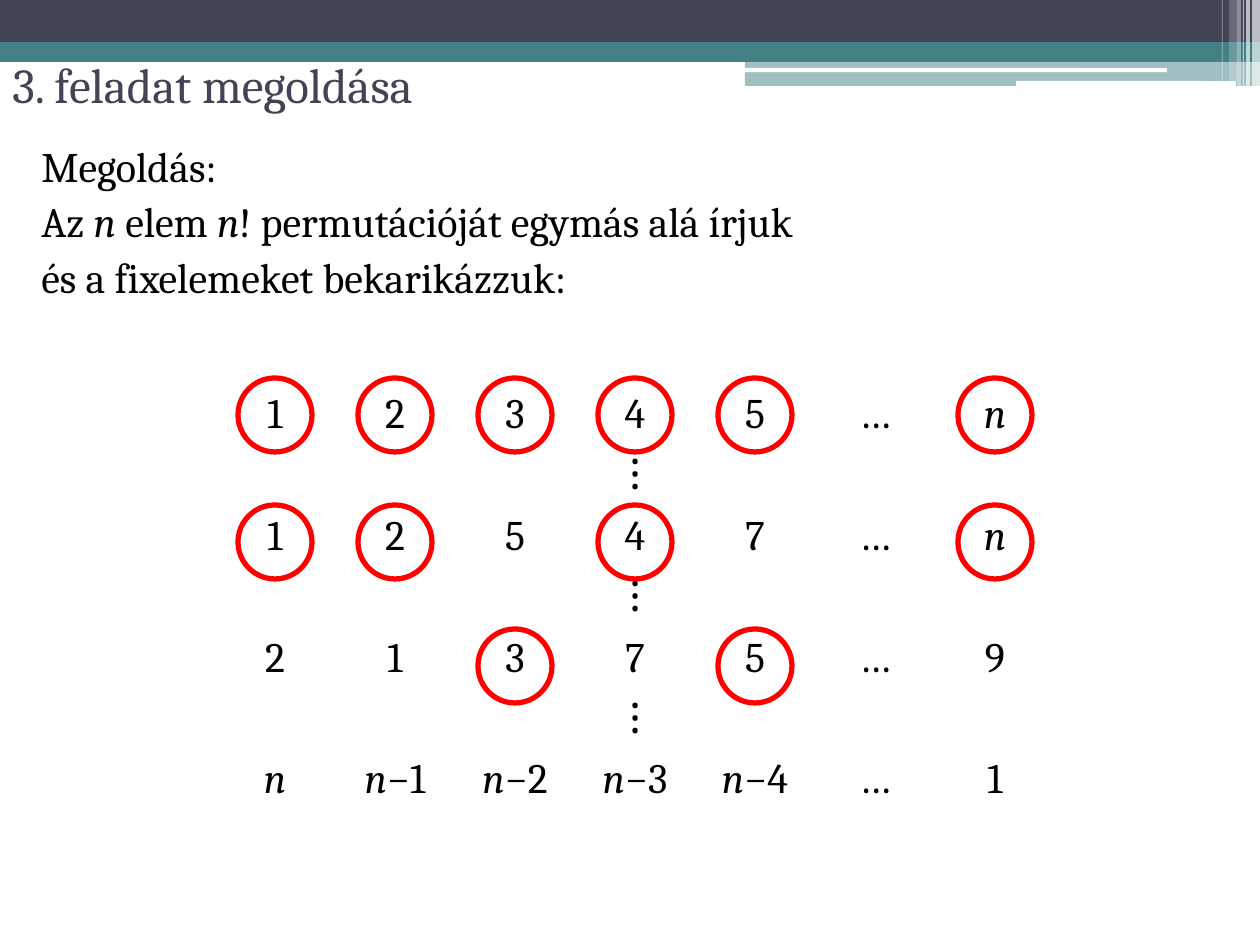
from lxml import etree
from pptx import Presentation
from pptx import util as u
from pptx.dml.color import RGBColor
from pptx.enum import shapes, text
from pptx.oxml.ns import qn

SCALE = 914400 / 126
COLORS = {"navy": "424456", "teal": "438086", "white": "FFFFFF",
          "black": "000000", "red": "FF0000"}
ROWS = [
    ["1", "2", "3", "4", "5", "…", "*n*"],
    ["", "", "", "⁝", "", "", ""],
    ["1", "2", "5", "4", "7", "…", "*n*"],
    ["", "", "", "⁝", "", "", ""],
    ["2", "1", "3", "7", "5", "…", "9"],
    ["", "", "", "⁝", "", "", ""],
    ["*n*", "*n*−1", "*n*−2", "*n*−3", "*n*−4", "…", "1"],
]
CIRCLE_TOPS = {0: 378, 2: 505, 4: 629}


def px(length):
    return u.Emu(round(length * SCALE))


def rgb(name):
    return RGBColor.from_string(COLORS[name])


def write(para, content, size=24, color="black", font="Cambria", align=None):
    """Fill a paragraph; parts between asterisks are italic."""
    para.alignment = align
    for index, part in enumerate(content.split("*")):
        if part:
            span = para.add_run()
            span.text = part
            span.font.size = u.Pt(size)
            span.font.name = font
            span.font.italic = index % 2 == 1
            span.font.color.rgb = rgb(color)


def add_bar(page, box, color, opacity=100, kind=shapes.MSO_SHAPE.RECTANGLE):
    bar = page.shapes.add_shape(kind, *map(px, box))
    bar.shadow.inherit = False
    bar.fill.solid()
    bar.fill.fore_color.rgb = rgb(color)
    bar.line.fill.background()
    if opacity < 100:
        tint = bar.fill._xPr.find(".//" + qn("a:srgbClr"))
        etree.SubElement(tint, qn("a:alpha"), val=str(opacity * 1000))


def add_banner(page, left, top, width):
    right = left + width
    for offset, y, height, color, opacity in [
            (0, 50, 12, "teal", 50), (0, 0, 42, "navy", 100), (0, 42, 20, "teal", 100),
            (745, 49, 13, "teal", 100), (745, 61, 25, "teal", 50)]:
        add_bar(page, (left + offset, top + y, width - offset, height), color, opacity)
    for x, y, length, height in [(745, 68, 422, 4), (1016, 81, 220, 5)]:
        add_bar(page, (left + x, top + y, length, height), "white",
                kind=shapes.MSO_SHAPE.ROUNDED_RECTANGLE)
    for inset, thickness, height, opacity in [
            (8, 8, 86, 65), (14, 4, 86, 65), (17, 1, 86, 60),
            (23, 4, 86, 40), (31, 8, 81, 20), (38, 1, 81, 30)]:
        add_bar(page, (right - inset, top, thickness, height), "white", opacity)


def add_text(page, box, lines, anchor, indent=0, before=0, **style):
    frame = page.shapes.add_textbox(*map(px, box)).text_frame
    frame.word_wrap = True
    frame.vertical_anchor = anchor
    for index, line in enumerate(lines):
        para = frame.paragraphs[0] if index == 0 else frame.add_paragraph()
        para.space_before = u.Pt(before)
        para._p.get_or_add_pPr().set("marL", str(px(indent)))
        write(para, line, **style)


def add_permutations(page, left, top, column, row):
    table = page.shapes.add_table(len(ROWS), len(ROWS[0]), px(left), px(top),
                                  px(column * len(ROWS[0])), px(row * len(ROWS))).table
    table.first_row = table.horz_banding = False
    for each in table.columns:
        each.width = px(column)
    for each, entries in zip(table.rows, ROWS):
        each.height = px(row)
        for cell, entry in zip(each.cells, entries):
            cell.fill.background()
            cell.margin_top = cell.margin_bottom = 0
            cell.vertical_anchor = text.MSO_ANCHOR.MIDDLE
            write(cell.text_frame.paragraphs[0], entry, align=text.PP_ALIGN.CENTER,
                  font="Times New Roman" if entry == "⁝" else "Cambria")


def add_circles(page, left, column, size):
    """Ring each entry that stands in its own place in the first row."""
    inset = (column - size) / 2
    for row, top in CIRCLE_TOPS.items():
        for index, (entry, home) in enumerate(zip(ROWS[row], ROWS[0])):
            if entry != home or entry == "…":
                continue
            circle = page.shapes.add_shape(shapes.MSO_SHAPE.OVAL, px(left + column * index + inset),
                                           px(top), px(size), px(size))
            circle.shadow.inherit = False
            circle.fill.background()
            circle.line.color.rgb = rgb("red")
            circle.line.width = u.Pt(3)


def main():
    deck = Presentation()
    deck.slide_width, deck.slide_height = px(1260), px(945)
    page = deck.slides.add_slide(deck.slide_layouts[6])
    add_banner(page, 0, 0, 1260)
    add_text(page, (0, 35, 747, 98), ["3. feladat megoldása"],
             text.MSO_ANCHOR.MIDDLE, size=28, color="navy")
    add_text(page, (14, 134, 1232, 772),
             ["Megoldás:", "Az *n* elem *n*! permutációját egymás alá írjuk",
              "és a fixelemeket bekarikázzuk:"],
             text.MSO_ANCHOR.TOP, indent=15, before=3, align=text.PP_ALIGN.JUSTIFY)
    add_permutations(page, 215, 384, column=120, row=61)
    add_circles(page, 215, column=120, size=74)
    deck.save("out.pptx")


if __name__ == "__main__":
    main()
